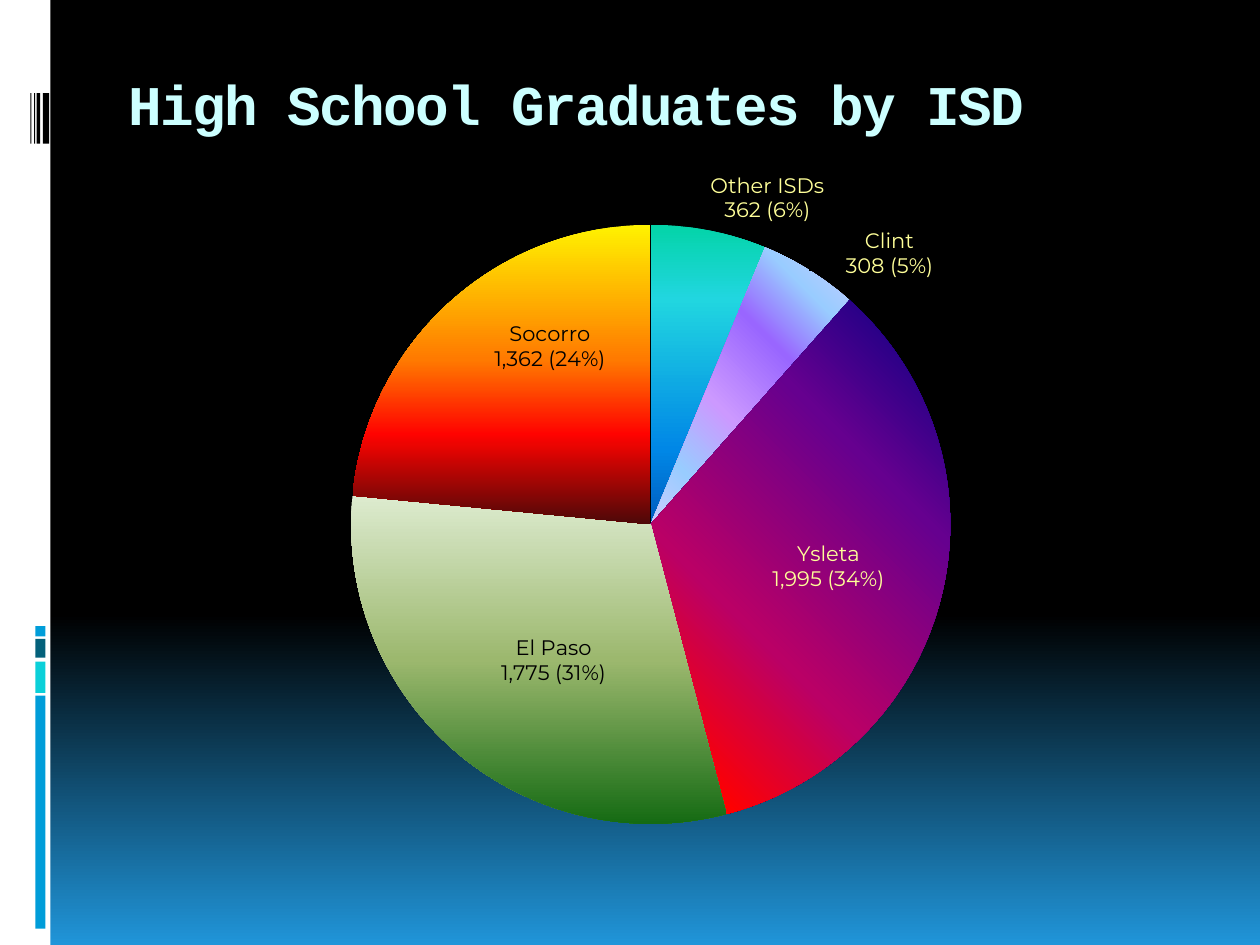
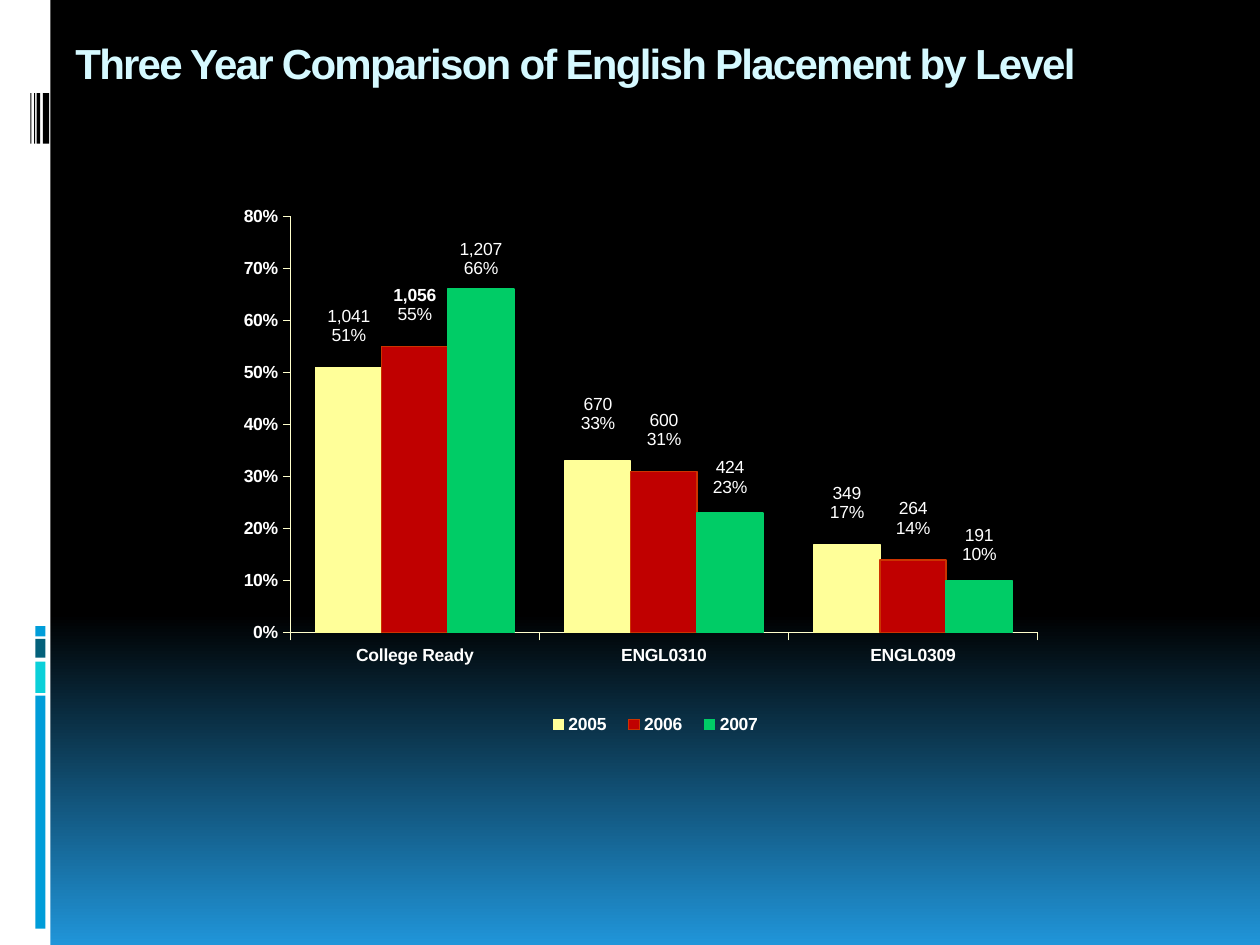
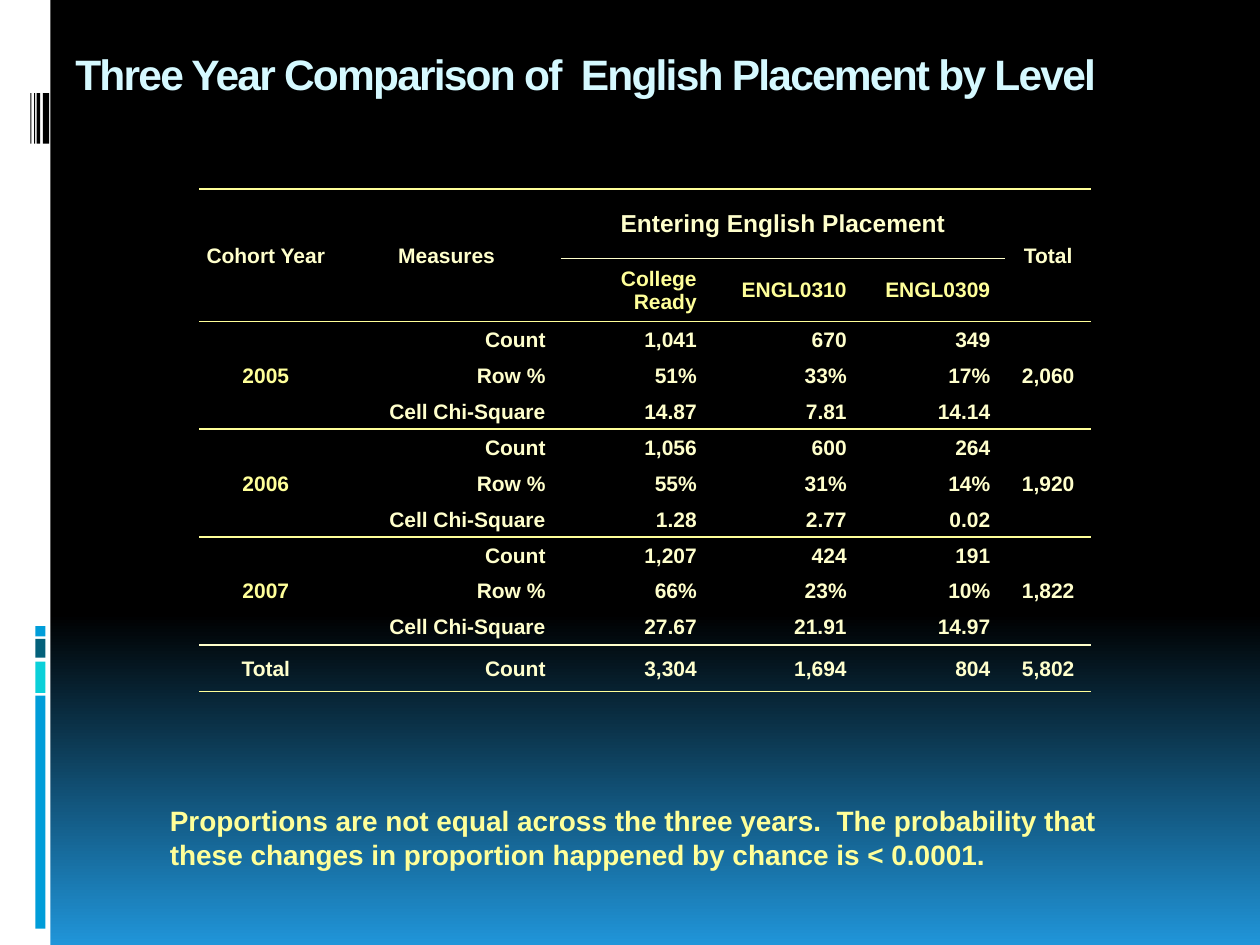
"""Build three slides on high school graduates and their English placement."""
from lxml import etree
from pptx import Presentation
from pptx import util as u
from pptx.chart import data as chart_data
from pptx.dml.color import RGBColor
from pptx.enum import chart as charts, shapes, text
from pptx.oxml import ns

YELLOW, CREAM, WHITE, BLACK = "FFFF99", "FFFFCC", "FFFFFF", "000000"
ICE, BLUE, TEAL, NAVY = "D5F9FF", "009DD9", "0BD0D9", "04617B"
BACKGROUND = [(0, BLACK), (65, BLACK), (100, "2095D9")]
NO_STYLE = "{2D5ABB26-0587-4C30-8999-92F81FD0307C}"

RAIL = [
    (0, 0, 0.4, 7.5, WHITE),
    (0.28, 5.52, 0.08, 1.85, BLUE),
    (0.28, 5.25, 0.08, 0.25, TEAL),
    (0.28, 5.07, 0.08, 0.15, NAVY),
    (0.28, 4.97, 0.08, 0.08, BLUE),
] + [(left, 0.74, width, 0.4, BLACK)
     for left, width in [(0.34, 0.05), (0.29, 0.03), (0.27, 0.01), (0.24, 0.01)]]

PIE_BOX, PIE_PLOT = (1, 1.08, 8.5, 5.87), (0.15, 0.12, 0.68, 0.81)
OUTSIDE = charts.XL_LABEL_POSITION.OUTSIDE_END
CENTER = charts.XL_LABEL_POSITION.CENTER
DISTRICTS = [
    dict(name="Other ISDs", count=362, share="6%", angle=90, color=YELLOW,
         position=OUTSIDE, shift=(0, 0),
         stops=[(0, "03D4A8"), (25, "21D6E0"), (75, "0087E6"), (100, "005CBF")]),
    dict(name="Clint", count=308, share="5%", angle=135, color=YELLOW,
         position=OUTSIDE, shift=(0.03, 0.02),
         stops=[(0, "CCCCFF"), (18, "99CCFF"), (36, "9966FF"),
                (61, "CC99FF"), (82, "99CCFF"), (100, "CCCCFF")]),
    dict(name="Ysleta", count=1995, share="34%", angle=135, color=YELLOW,
         position=CENTER, shift=(0.03, 0.01),
         stops=[(0, "000082"), (30, "66008F"), (65, "BA0066"),
                (90, "FF0000"), (100, "FF8200")]),
    dict(name="El Paso", count=1775, share="31%", angle=90, color=BLACK,
         position=CENTER, shift=(0, 0.03),
         stops=[(0, "DDEBCF"), (50, "9CB86E"), (100, "156B13")]),
    dict(name="Socorro", count=1362, share="24%", angle=90, color=BLACK,
         position=CENTER, shift=(0, -0.09),
         stops=[(0, "FFF200"), (45, "FF7A00"), (70, "FF0300"), (100, "4D0808")]),
]

LEVELS = ["College Ready", "ENGL0310", "ENGL0309"]
MEASURES = ["Count", "Row %", "Cell Chi-Square"]
COHORTS = [
    dict(year="2005", total="2,060", fill=YELLOW, line=YELLOW,
         lifts=(-0.03, -0.04, -0.03), bold=(), shares=(0.51, 0.33, 0.17),
         values=[("1,041", "670", "349"), ("51%", "33%", "17%"), ("14.87", "7.81", "14.14")]),
    dict(year="2006", total="1,920", fill="C00000", line="CC3300",
         lifts=(-0.03, -0.03, -0.03), bold=("1,056",), shares=(0.55, 0.31, 0.14),
         values=[("1,056", "600", "264"), ("55%", "31%", "14%"), ("1.28", "2.77", "0.02")]),
    dict(year="2007", total="1,822", fill="00CC66", line="00CC66",
         lifts=(-0.01, -0.02, -0.02), bold=(), shares=(0.66, 0.23, 0.1),
         values=[("1,207", "424", "191"), ("66%", "23%", "10%"), ("27.67", "21.91", "14.97")]),
]
COLUMN_BOX, COLUMN_PLOT = (1.63, 1.54, 6.74, 4.41), (0.1, 0.04, 0.88, 0.75)
LEGEND_PLACE = (0.39, 0.92, 0.28, 0.07)

TABLE_BOX = (1.58, 1.5, 7.08, 4)
COLUMN_WIDTHS = [1.06, 1.81, 1.2, 1.19, 1.14, 0.68]
ROW_HEIGHTS = [0.55, 0.5] + [2.57 / 9] * 9 + [0.37]
ALL_COLUMNS = range(6)
RULES = {0: (YELLOW, 1, ALL_COLUMNS), 1: (CREAM, 0.75, range(2, 5)),
         2: (YELLOW, 1, ALL_COLUMNS), 5: (YELLOW, 1, ALL_COLUMNS),
         8: (YELLOW, 1, ALL_COLUMNS), 11: (CREAM, 0.75, ALL_COLUMNS),
         12: (YELLOW, 0.75, ALL_COLUMNS)}
MERGES = [(0, 0, 1, 0), (0, 1, 1, 1), (0, 2, 0, 4), (0, 5, 1, 5)] + [
    (top, column, top + 2, column) for top in (2, 5, 8) for column in (0, 5)]
NOTE = ("Proportions are not equal across the three years.  The probability that "
        "these changes in proportion happened by chance is < 0.0001.")


def rgb(value):
    return RGBColor.from_string(value)


def inches(values):
    return [u.Inches(value) for value in values]


def add_element(parent, tag, **attributes):
    return etree.SubElement(parent, ns.qn(tag), {k: str(v) for k, v in attributes.items()})


def write(frame, words, size=12, color=CREAM, font="Arial", bold=True, align=None, spacing=0):
    frame.text = words
    for paragraph in frame.paragraphs:
        if align is not None:
            paragraph.alignment = align
        for run in paragraph.runs:
            run.font.size, run.font.name, run.font.bold = u.Pt(size), font, bold
            run.font.color.rgb = rgb(color)
            if spacing:
                run.font._element.set("spc", str(spacing * 100))


def add_text(slide, box, words, anchor=text.MSO_ANCHOR.MIDDLE, bottom=0.05, **style):
    frame = slide.shapes.add_textbox(*inches(box)).text_frame
    frame.word_wrap, frame.vertical_anchor = True, anchor
    frame.margin_bottom = u.Inches(bottom)
    write(frame, words, **style)


def paint_gradient(fill, owner, stops, angle):
    fill.gradient()
    gradient = owner.xpath(".//a:gradFill")[-1]
    gradient.clear()
    stop_list = add_element(gradient, "a:gsLst")
    for position, color in stops:
        stop = add_element(stop_list, "a:gs", pos=position * 1000)
        add_element(stop, "a:srgbClr", val=color)
    add_element(gradient, "a:lin", ang=angle * 60000, scaled=0)


def set_layout(parent, index, **values):
    for old in parent.findall(ns.qn("c:layout")):
        parent.remove(old)
    layout = etree.Element(ns.qn("c:layout"))
    manual = add_element(layout, "c:manualLayout")
    for name, value in values.items():
        add_element(manual, f"c:{name}", val=value)
    parent.insert(index, layout)


def add_chart(slide, kind, box, plot, categories, series):
    data = chart_data.CategoryChartData()
    data.categories = categories
    for name, values, number_format in series:
        data.add_series(name, values, number_format)
    chart = slide.shapes.add_chart(kind, *inches(box), data).chart
    chart.has_title = chart.has_legend = False
    chart.font.size, chart.font.name = u.Pt(10), "Arial"
    chart.font.color.rgb = rgb(WHITE)
    left, top, width, height = plot
    set_layout(chart._chartSpace.xpath(".//c:plotArea")[0], 0, layoutTarget="inner",
               xMode="edge", yMode="edge", x=left, y=top, w=width, h=height)
    return chart


def label_point(series, index, words, position, shift, **style):
    label = series.points[index].data_label
    write(label.text_frame, words, bold=False, **style)
    label.position = position
    if any(shift):
        set_layout(series._element.xpath(".//c:dLbl")[-1], 1, x=shift[0], y=shift[1])
    return label


def show_labels(series, number_format, flags):
    series.data_labels.number_format = number_format
    series.data_labels.number_format_is_linked = False
    for flag, value in flags.items():
        for element in series._element.xpath(f".//c:{flag}"):
            element.set("val", str(value))


def add_slide(presentation):
    slide = presentation.slides.add_slide(presentation.slide_layouts[6])
    for *box, color in RAIL:
        shape = slide.shapes.add_shape(shapes.MSO_SHAPE.RECTANGLE, *inches(box))
        shape.shadow.inherit = False
        shape.fill.solid()
        shape.fill.fore_color.rgb = rgb(color)
        shape.line.fill.background()
    return slide


def build_graduates(slide):
    add_text(slide, (0.92, 0.5, 8.5, 1), "High School Graduates by ISD", bottom=0.42,
             size=32, font="Courier New", color="CCFFFF", spacing=-1)
    chart = add_chart(slide, charts.XL_CHART_TYPE.PIE, PIE_BOX, PIE_PLOT,
                      [d["name"] for d in DISTRICTS],
                      [("Series 1", [d["count"] for d in DISTRICTS], "#,##0")])
    chart.font.name = "Calibri"
    chart.plots[0].vary_by_categories = True
    series = chart.plots[0].series[0]
    for index, district in enumerate(DISTRICTS):
        look = series.points[index].format
        paint_gradient(look.fill, series._element, district["stops"], district["angle"])
        look.line.fill.background()
        label_point(series, index, "{name}\n{count:,} ({share})".format(**district),
                    district["position"], district["shift"],
                    font="Montserrat", color=district["color"])
    show_labels(series, "#,##0", dict(showVal=1, showPercent=1, showCatName=1))
    font = series.data_labels.font
    font.size, font.name, font.bold = u.Pt(12), "Montserrat", True
    font.color.rgb = rgb(YELLOW)


def build_comparison(slide):
    add_text(slide, (0.5, 0.25, 9, 0.53), "Three Year Comparison of English Placement by Level",
             bottom=0.08, size=24, color=ICE, spacing=-1)
    chart = add_chart(slide, charts.XL_CHART_TYPE.COLUMN_CLUSTERED, COLUMN_BOX, COLUMN_PLOT,
                      LEVELS, [(c["year"], c["shares"], "0%") for c in COHORTS])
    chart.font.bold = True
    chart.has_legend = True
    chart.legend.position = charts.XL_LEGEND_POSITION.BOTTOM
    chart.legend.include_in_layout = False
    left, top, width, height = LEGEND_PLACE
    set_layout(chart.legend._element, 1, xMode="edge", yMode="edge",
               x=left, y=top, w=width, h=height)
    for axis in (chart.category_axis, chart.value_axis):
        axis.major_tick_mark = charts.XL_TICK_MARK.OUTSIDE
        axis.has_major_gridlines = False
        axis.format.line.color.rgb = rgb(CREAM)
        axis.format.line.width = u.Pt(0.75)
    axis = chart.value_axis
    axis.minimum_scale, axis.maximum_scale, axis.major_unit = 0, 0.8, 0.1
    axis.tick_labels.number_format, axis.tick_labels.number_format_is_linked = "0%", False
    plot = chart.plots[0]
    plot.vary_by_categories, plot.gap_width, plot.overlap = False, 77, 0
    for series, cohort in zip(plot.series, COHORTS):
        series.format.fill.solid()
        series.format.fill.fore_color.rgb = rgb(cohort["fill"])
        series.format.line.color.rgb = rgb(cohort["line"])
        series.format.line.width = u.Pt(0.75)
        counts, percents, _ = cohort["values"]
        for index, (count, percent) in enumerate(zip(counts, percents)):
            label = label_point(series, index, f"{count}\n{percent}", OUTSIDE,
                                (0, cohort["lifts"][index]), size=10, color=WHITE)
            label.text_frame.paragraphs[0].runs[0].font.bold = count in cohort["bold"]
        show_labels(series, "0%", dict(showVal=1, showLeaderLines=0))
        series.data_labels.font.size = u.Pt(10)


def table_rows():
    rows = [("Cohort Year", "Measures", "Entering English Placement", "", "", "Total"),
            ("", "", *LEVELS, "")]
    for cohort in COHORTS:
        for index, (measure, values) in enumerate(zip(MEASURES, cohort["values"])):
            year, total = (cohort["year"], cohort["total"]) if index == 0 else ("", "")
            rows.append((year, measure, *values, total))
    return rows + [("Total", "Count", "3,304", "1,694", "804", "5,802")]


def rule_cell(cell, row, column):
    properties = cell._tc.get_or_add_tcPr()
    for tag, boundary in (("a:lnB", row + 1), ("a:lnT", row)):
        color, width, columns = RULES.get(boundary, (None, 0, ()))
        line = etree.Element(ns.qn(tag), w=str(u.Pt(width)))
        if column in columns:
            add_element(add_element(line, "a:solidFill"), "a:srgbClr", val=color)
        else:
            add_element(line, "a:noFill")
        properties.insert(0, line)


def build_table(slide):
    add_text(slide, (0.5, 0.33, 9, 0.53), "Three Year Comparison of  English Placement by Level",
             bottom=0.07, size=24.3, color=ICE, spacing=-1)
    rows = table_rows()
    table = slide.shapes.add_table(len(rows), len(COLUMN_WIDTHS), *inches(TABLE_BOX)).table
    table.first_row = table.horz_banding = False
    table._tbl.tblPr.find(ns.qn("a:tableStyleId")).text = NO_STYLE
    for column, width in zip(table.columns, inches(COLUMN_WIDTHS)):
        column.width = width
    for row, height in zip(table.rows, inches(ROW_HEIGHTS)):
        row.height = height
    for top, left, bottom, right in MERGES:
        table.cell(top, left).merge(table.cell(bottom, right))
    years = [cohort["year"] for cohort in COHORTS]
    for row, values in enumerate(rows):
        for column, words in enumerate(values):
            cell = table.cell(row, column)
            centered = row == 0 or column in (0, 5)
            cell.fill.background()
            cell.vertical_anchor = text.MSO_ANCHOR.MIDDLE
            cell.margin_left = cell.margin_top = u.Inches(0.01)
            cell.margin_right, cell.margin_bottom = inches((0.01 if centered else 0.12, 0))
            rule_cell(cell, row, column)
            if words:
                write(cell.text_frame, words, size=14 if (row, column) == (0, 2) else 12,
                      color=YELLOW if row == 1 or words in years else CREAM,
                      align=text.PP_ALIGN.CENTER if centered else text.PP_ALIGN.RIGHT)
    add_text(slide, (1.25, 6.33, 7.92, 0.64), NOTE, anchor=text.MSO_ANCHOR.TOP,
             size=16, color=YELLOW)


def main():
    presentation = Presentation()
    presentation.slide_width, presentation.slide_height = inches((10, 7.5))
    master = presentation.slide_master
    paint_gradient(master.background.fill, master._element, BACKGROUND, 90)
    for build in (build_graduates, build_comparison, build_table):
        build(add_slide(presentation))
    presentation.save("out.pptx")


if __name__ == "__main__":
    main()
